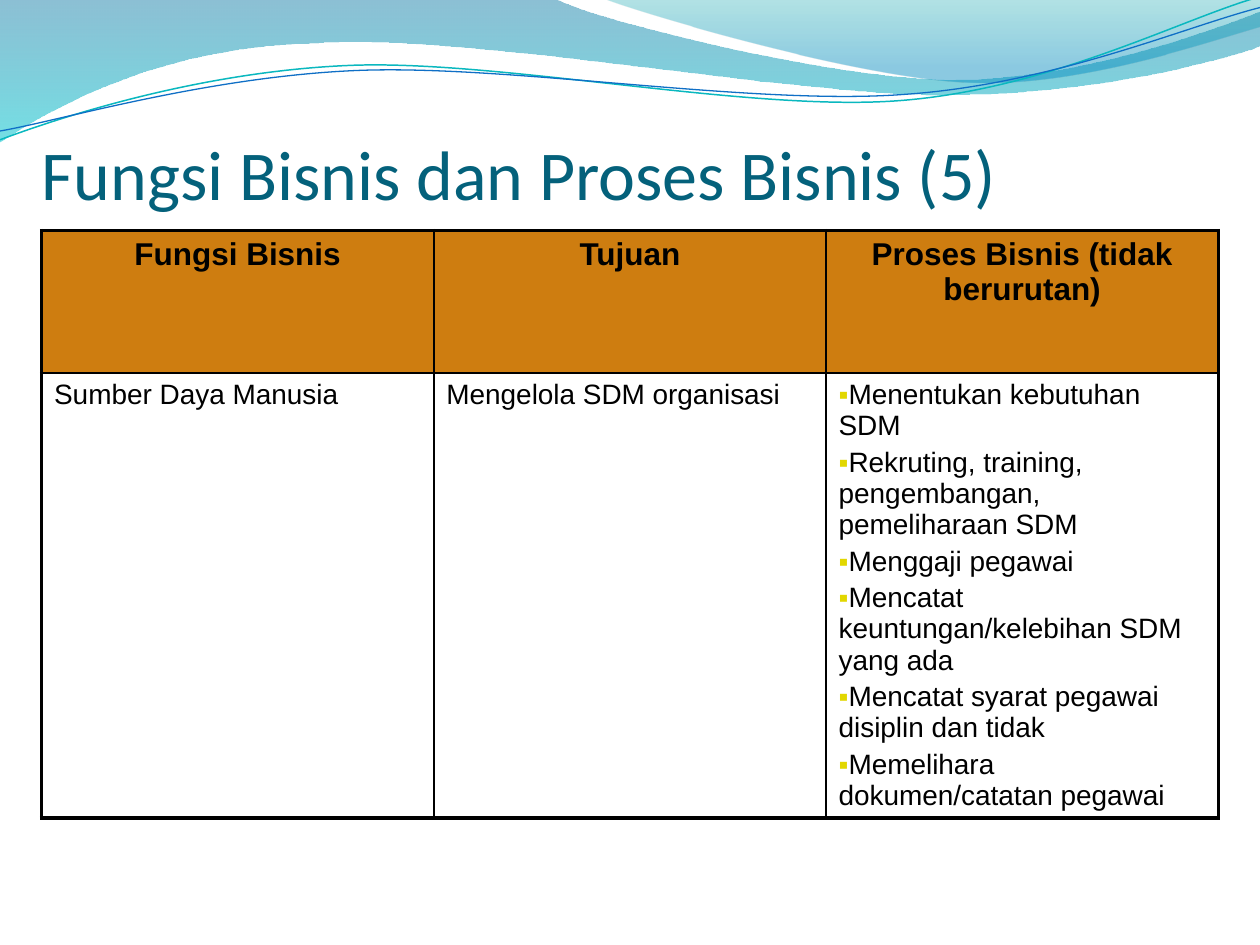
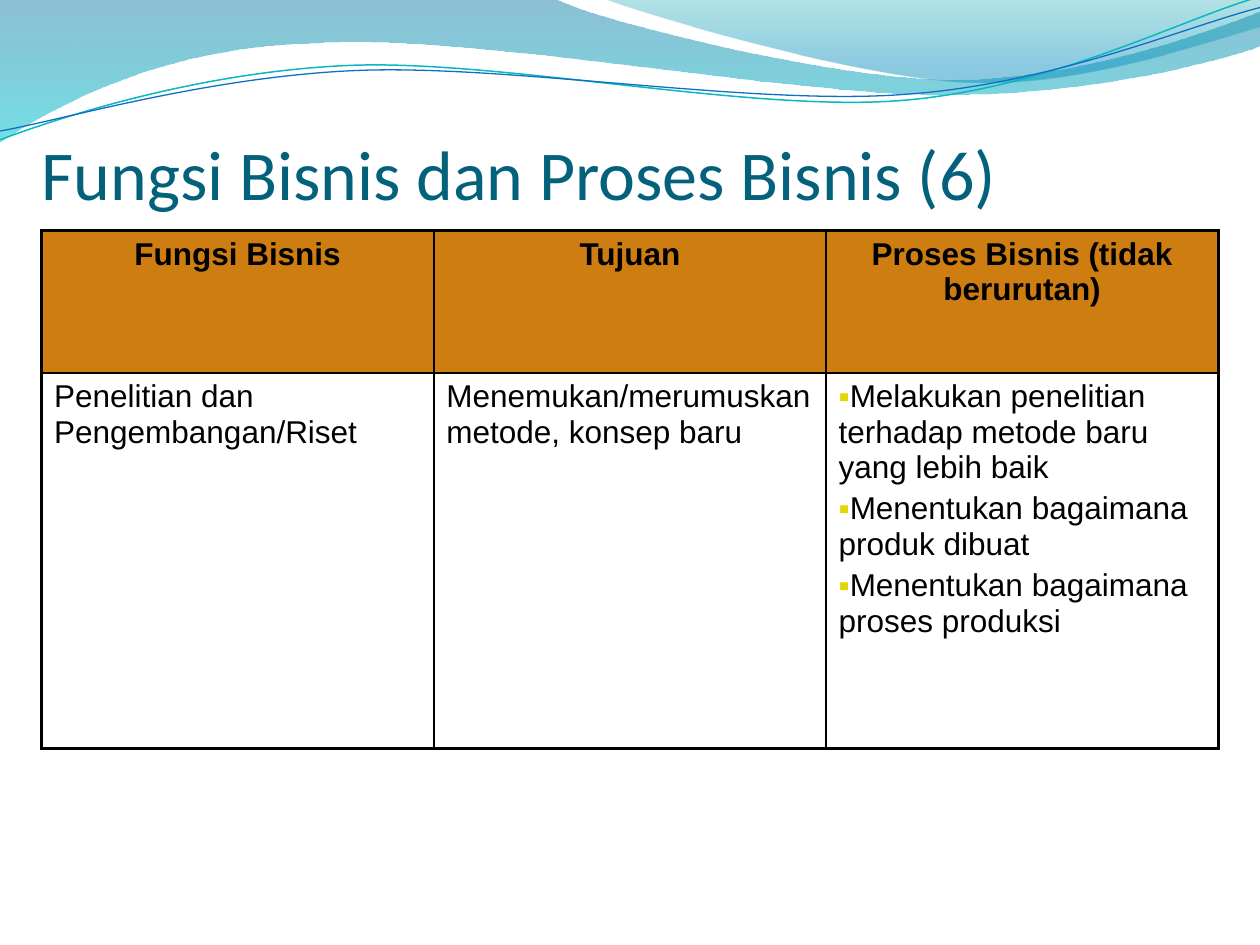
import pptx
import pptx.util
from dataclasses import dataclass
from lxml import etree
from pptx.dml.color import RGBColor
from pptx.enum.text import MSO_ANCHOR, MSO_AUTO_SIZE, PP_ALIGN
from pptx.oxml.ns import qn
from pptx.util import Inches, Pt


@dataclass(frozen=True)
class Theme:
    title: str = "04617B"
    text: str = "000000"
    header_fill: str = "CE7D10"
    bullet: str = "E2D700"
    title_font: str = "Calibri"
    body_font: str = "Arial"
    title_size: int = 40
    header_size: int = 18
    outer_border: float = 2.25
    inner_border: float = 1


THEME = Theme()

HEADERS = ["Fungsi Bisnis", "Tujuan", "Proses Bisnis (tidak berurutan)"]
SLIDES = [
    {
        "title": "Fungsi Bisnis dan Proses Bisnis (5)",
        "size": 16,
        "function": "Sumber Daya Manusia",
        "goal": "Mengelola SDM organisasi",
        "processes": [
            "Menentukan kebutuhan SDM",
            "Rekruting, training, pengembangan, pemeliharaan SDM",
            "Menggaji pegawai",
            "Mencatat keuntungan/kelebihan SDM yang ada",
            "Mencatat syarat pegawai disiplin dan tidak",
            "Memelihara dokumen/catatan pegawai",
        ],
    },
    {
        "title": "Fungsi Bisnis dan Proses Bisnis (6)",
        "size": 18,
        "function": "Penelitian dan Pengembangan/Riset",
        "goal": "Menemukan/merumuskan metode, konsep baru",
        "processes": [
            "Melakukan penelitian terhadap metode baru yang lebih baik",
            "Menentukan bagaimana produk dibuat",
            "Menentukan bagaimana proses produksi",
        ],
    },
]

# Each wave is a start point followed by line ends (2 numbers) and Bezier curves (6 numbers).
# Bands carry gradient stops (position, colour, opacity); strands carry a line (colour, width).
WAVES = [
    {"start": (0, 0),
     "steps": [(4.4, -0.01), (4.76, 0.17, 6.64, 0.63, 7.58, 0.63),
               (8.53, 0.63, 9.58, 0.26, 10, 0.09), (10.01, 0.36),
               (9.83, 0.44, 8.7, 0.76, 7.46, 0.75), (6.22, 0.75, 3.82, 0.28, 2.57, 0.34),
               (1.29, 0.36, 0.46, 0.83, -0.01, 1.13)],
     "stops": [(0, "0074A1", 45), (1, "00C6CF", 55)]},
    {"start": (4.79, -0.01),
     "steps": [(5.09, 0.11, 6.82, 0.62, 7.69, 0.65), (8.56, 0.69, 9.61, 0.32, 10, 0.21), (10, 0)],
     "stops": [(0, "00A1A9", 30), (0.8, "008BBF", 45)]},
    {"start": (0, 1.11),
     "steps": [(0.48, 0.93, 1.58, 0.57, 2.77, 0.52), (3.95, 0.47, 5.93, 0.89, 7.13, 0.8),
               (8.33, 0.71, 9.38, 0.15, 9.98, -0.02)],
     "line": ("0AB8BF", 0.85)},
    {"start": (0, 1.04),
     "steps": [(0.47, 0.96, 1.64, 0.61, 2.83, 0.56), (4.03, 0.51, 5.97, 0.84, 7.17, 0.75),
               (8.36, 0.67, 9.41, 0.21, 10, 0.06)],
     "line": ("0F6FC6", 0.75)},
]


def rgb(color):
    return RGBColor.from_string(color)


def emu(point):
    return tuple(Inches(value) for value in point)


def bend(sp, steps):
    """Turn the straight segments of sp into Bezier curves where a step has control points."""
    for node, step in zip(list(sp.element.iter(qn("a:lnTo"))), steps):
        if len(step) == 6:
            node.tag = qn("a:cubicBezTo")
            for i in (0, 1):
                x, y = emu(step[2 * i:2 * i + 2])
                control = etree.Element(qn("a:pt"), x=str(x - sp.left), y=str(y - sp.top))
                node.insert(i, control)


def draw_wave(shapes, wave):
    builder = shapes.build_freeform(*emu(wave["start"]))
    builder.add_line_segments([emu(step[-2:]) for step in wave["steps"]], close="stops" in wave)
    sp = builder.convert_to_shape()
    bend(sp, wave["steps"])
    sp.shadow.inherit = False
    if "line" in wave:
        color, width = wave["line"]
        sp.fill.background()
        sp.line.color.rgb = rgb(color)
        sp.line.width = Pt(width)
        return sp
    sp.line.fill.background()
    sp.fill.gradient()
    sp.fill.gradient_angle = 270
    for stop, (position, color, _) in zip(sp.fill.gradient_stops, wave["stops"]):
        stop.position = position
        stop.color.rgb = rgb(color)
    for node, (_, _, opacity) in zip(sp.element.iter(qn("a:srgbClr")), wave["stops"]):
        etree.SubElement(node, qn("a:alpha"), val=str(opacity * 1000))
    return sp


def share_waves(s):
    """Draw the waves on slide s, then move them behind everything on its layout."""
    tree = s.slide_layout.shapes.element
    for i, wave in enumerate(WAVES):
        node = draw_wave(s.shapes, wave).element
        node.nvSpPr.cNvPr.set("id", str(20 + i))
        tree.insert(2 + i, node)


def set_title(s, text):
    title = s.shapes.title
    title.left, title.top, title.width, title.height = map(Inches, (0.33, 0.25, 9.31, 1.45))
    tf = title.text_frame
    tf.text = text
    tf.auto_size = MSO_AUTO_SIZE.NONE
    tf.vertical_anchor = MSO_ANCHOR.BOTTOM
    tf.margin_left = tf.margin_right = tf.margin_bottom = 0
    tf.margin_top = Inches(0.05)
    p = tf.paragraphs[0]
    p.alignment = PP_ALIGN.LEFT
    p.font.name, p.font.size = THEME.title_font, Pt(THEME.title_size)
    p.font.color.rgb = rgb(THEME.title)


def set_borders(cell, widths):
    """Set left, right, top and bottom border widths, in points."""
    tc_pr = cell._tc.get_or_add_tcPr()
    for i, (side, width) in enumerate(zip("LRTB", widths)):
        ln = etree.Element(qn(f"a:ln{side}"), w=str(Pt(width)))
        fill = etree.SubElement(ln, qn("a:solidFill"))
        etree.SubElement(fill, qn("a:srgbClr"), val=THEME.text)
        tc_pr.insert(i, ln)


def add_bullet(p):
    color = etree.Element(qn("a:buClr"))
    etree.SubElement(color, qn("a:srgbClr"), val=THEME.bullet)
    font = etree.Element(qn("a:buFont"), typeface=THEME.body_font)
    p._p.get_or_add_pPr().find(qn("a:spcBef")).addnext(color)
    color.addnext(font)
    font.addnext(etree.Element(qn("a:buChar"), char="▪"))


def fill_cell(cell, lines, size, header=False, bullets=False):
    if header:
        cell.fill.solid()
        cell.fill.fore_color.rgb = rgb(THEME.header_fill)
    else:
        cell.fill.background()
    tf = cell.text_frame
    tf.text = "\n".join(lines)
    for p in tf.paragraphs:
        p.alignment = PP_ALIGN.CENTER if header else PP_ALIGN.LEFT
        p.space_before = Pt(0.2 * size)
        p.font.name, p.font.size, p.font.bold = THEME.body_font, Pt(size), header
        p.font.color.rgb = rgb(THEME.text)
        if bullets:
            add_bullet(p)


def add_process_table(s, content):
    frame = s.shapes.add_table(2, len(HEADERS), Inches(0.33), Inches(1.83),
                               Inches(9.34), Inches(4.11))
    table = frame.table
    table.first_row = table.horz_banding = False
    table.rows[0].height, table.rows[1].height = Inches(1.13), Inches(2.98)
    body = [[content["function"]], [content["goal"]], content["processes"]]
    last = len(HEADERS) - 1
    for col, (header, lines) in enumerate(zip(HEADERS, body)):
        fill_cell(table.cell(0, col), [header], THEME.header_size, header=True)
        fill_cell(table.cell(1, col), lines, content["size"], bullets=col == last)
        for row in (0, 1):
            on_edge = (col == 0, col == last, row == 0, row == 1)
            set_borders(table.cell(row, col),
                        [THEME.outer_border if edge else THEME.inner_border for edge in on_edge])


def main():
    prs = pptx.Presentation()
    prs.slide_width, prs.slide_height = Inches(10), Inches(7.5)
    title_only = prs.slide_layouts[5]
    for i, content in enumerate(SLIDES):
        s = prs.slides.add_slide(title_only)
        if i == 0:
            share_waves(s)
        set_title(s, content["title"])
        add_process_table(s, content)
    prs.save("out.pptx")


if __name__ == "__main__":
    main()
